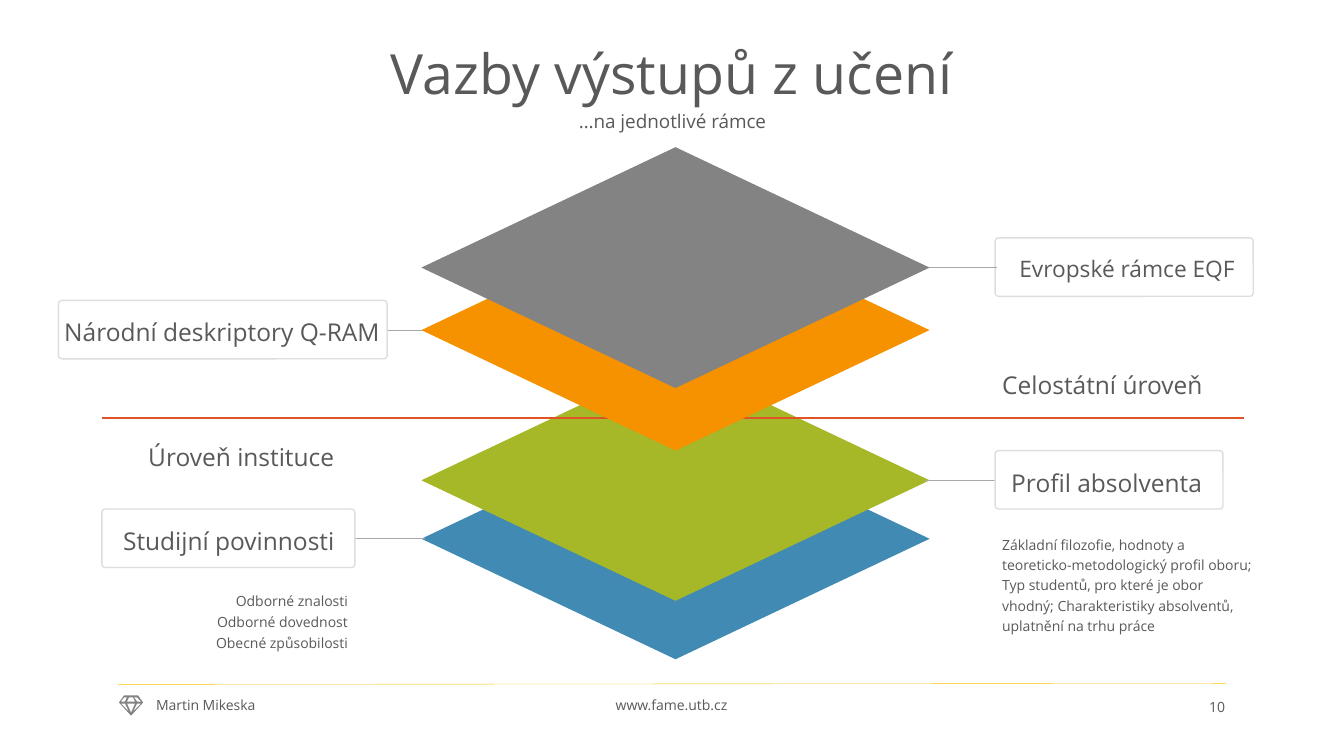
from lxml.etree import SubElement
from pptx import Presentation
from pptx.dml.color import RGBColor
from pptx.enum.shapes import MSO_CONNECTOR as CONN, MSO_SHAPE as SHAPE
from pptx.enum.text import MSO_ANCHOR as ANCHOR, MSO_AUTO_SIZE as FIT, PP_ALIGN as ALIGN
from pptx.oxml.ns import qn
from pptx.util import Pt

PX = 9144
FONT = "Open Sans"
TEXT, GREY, RULE, BORDER = "595959", "838383", "A6AAA9", "DCDEE0"
GEM = [
    [(123, 690), (137, 690), (142, 697), (130, 710), (118, 697)],
    [(136, 696), (133, 692), (136, 692), (140, 696)],
    [(132, 706), (136, 698), (140, 698)],
    [(130, 707), (126, 698), (134, 698)],
    [(120, 698), (124, 698), (128, 706)],
    [(123, 692), (126, 692), (124, 696), (120, 696)],
    [(132, 692), (134, 696), (126, 696), (128, 692)],
]


def px(*lengths):
    """Turn px lengths into EMU."""
    return [n * PX for n in lengths]


def rgb(color):
    """Turn a hex string into a colour."""
    return RGBColor.from_string(color)


def write(tf, text, size=17.5, align=ALIGN.LEFT, anchor=ANCHOR.MIDDLE,
          inset=(0, 0), spacing=0.9):
    """Fill a text frame, one paragraph per line of text."""
    tf.word_wrap = True
    tf.auto_size = FIT.NONE
    tf.vertical_anchor = anchor
    tf.margin_left = tf.margin_right = inset[0] * PX
    tf.margin_top = tf.margin_bottom = inset[1] * PX
    for i, line in enumerate(text.split("\n")):
        p = tf.add_paragraph() if i else tf.paragraphs[0]
        p.alignment = align
        p.line_spacing = spacing
        p.space_before = Pt(0)
        r = p.add_run()
        r.text = line
        r.font.name = FONT
        r.font.size = Pt(size)
        r.font.bold = False
        r.font.color.rgb = rgb(TEXT)


def add_label(s, text, box, **fmt):
    """Add a text box."""
    write(s.shapes.add_textbox(*px(*box)).text_frame, text, **fmt)


def fill_placeholder(ph, text, box, **fmt):
    """Move a placeholder and fill it without bullets."""
    ph.left, ph.top, ph.width, ph.height = px(*box)
    write(ph.text_frame, text, **fmt)
    for p in ph.text_frame.paragraphs:
        pPr = p._p.get_or_add_pPr()
        pPr.set("marL", "0")
        pPr.set("indent", "0")
        SubElement(pPr, qn("a:buNone"))


def add_line(s, x1, y1, x2, y2, color=RULE, width=0.25):
    """Add a straight line."""
    c = s.shapes.add_connector(CONN.STRAIGHT, *px(x1, y1, x2, y2))
    c.line.color.rgb = rgb(color)
    c.line.width = Pt(width)
    SubElement(c._element.spPr, qn("a:effectLst"))


def paint(sp, fill, border=None):
    """Give a shape a flat fill and an optional border."""
    sp.shadow.inherit = False
    sp.fill.solid()
    sp.fill.fore_color.rgb = rgb(fill)
    if border:
        sp.line.color.rgb = rgb(border)
        sp.line.width = Pt(1)
    else:
        sp.line.fill.background()


def add_card(s, x, y, width):
    """Add a white rounded card."""
    sp = s.shapes.add_shape(SHAPE.ROUNDED_RECTANGLE, *px(x, y, width, 58))
    sp.adjustments[0] = 0.06
    paint(sp, "FFFFFF", BORDER)


def add_layer(s, y, color):
    """Add one diamond of the stack."""
    paint(s.shapes.add_shape(SHAPE.DIAMOND, *px(418, y, 504, 239)), color)


def add_gem(s):
    """Add the gem icon with its facets cut out."""
    fb = s.shapes.build_freeform(*GEM[0][0], scale=PX)
    fb.add_line_segments(GEM[0][1:], close=True)
    for facet in GEM[1:]:
        fb.move_to(*facet[0])
        fb.add_line_segments(facet[1:], close=True)
    paint(fb.convert_to_shape(), GREY)


def add_footer(s):
    """Add the footer rule, icon and texts."""
    add_line(s, 117, 679, 1216, 678, color="FEC306")
    add_gem(s)
    small = dict(size=10, inset=(10, 5))
    add_label(s, "www.fame.utb.cz", (558, 688, 216, 26),
              align=ALIGN.CENTER, anchor=ANCHOR.TOP, **small)
    add_label(s, "Martin Mikeska", (145, 688, 216, 26), anchor=ANCHOR.TOP, **small)
    add_label(s, "10", (1096, 689, 129, 25), align=ALIGN.RIGHT, spacing=1.0, **small)


def add_headings(s):
    """Fill the title, subtitle and upper level name."""
    title, subtitle, level = s.placeholders
    centred = dict(align=ALIGN.CENTER, inset=(10, 5))
    fill_placeholder(title, "Vazby výstupů z učení", (165, 39, 1003, 74),
                     size=39.6, **centred)
    fill_placeholder(subtitle, "…na jednotlivé rámce", (167, 104, 1000, 35),
                     size=13.5, **centred)
    fill_placeholder(level, "Celostátní úroveň", (994, 361, 205, 45))


def add_stack(s):
    """Add the layers, their cards and the line between the levels."""
    add_card(s, 987, 236, 256)
    add_layer(s, 415, "418AB3")
    add_layer(s, 357, "A6B727")
    for x, y in ((917, 476), (917, 265), (350, 328), (350, 534)):
        add_line(s, x, y, x + 72, y)
    for card in ((987, 447, 226), (58, 298, 326), (101, 505, 251)):
        add_card(s, *card)
    add_line(s, 101, 415, 1234, 415, color="DF5327", width=1.5)
    add_layer(s, 208, "F69200")
    add_layer(s, 146, GREY)


def add_labels(s):
    """Add the card names, the lower level name and the details."""
    right = dict(align=ALIGN.RIGHT, inset=(3, 3))
    add_label(s, "Studijní povinnosti", (113, 515, 222, 42), spacing=1.0, **right)
    add_label(s, "Národní deskriptory Q-RAM", (54, 308, 326, 42), spacing=1.0, **right)
    add_label(s, "Profil absolventa", (1000, 455, 213, 42), inset=(3, 3), spacing=1.2)
    add_label(s, "Evropské rámce EQF", (1011, 246, 222, 45), size=16.2)
    add_label(s, "Úroveň instituce", (147, 432, 205, 45))
    add_label(s, "Odborné znalosti\nOdborné dovednost\nObecné způsobilosti",
              (115, 581, 233, 72), size=10, anchor=ANCHOR.TOP, spacing=Pt(15), **right)
    add_label(s, "Základní filozofie, hodnoty a teoreticko-metodologický profil oboru; "
              "Typ studentů, pro které je obor vhodný; Charakteristiky absolventů, "
              "uplatnění na trhu práce", (991, 526, 256, 145),
              size=10, anchor=ANCHOR.TOP, inset=(3, 3), spacing=1.2)


def main():
    """Build the slide and save it."""
    prs = Presentation()
    prs.slide_width, prs.slide_height = px(1333, 750)
    s = prs.slides.add_slide(prs.slide_layouts[3])
    add_footer(s)
    add_headings(s)
    add_stack(s)
    add_labels(s)
    prs.save("out.pptx")


if __name__ == "__main__":
    main()
